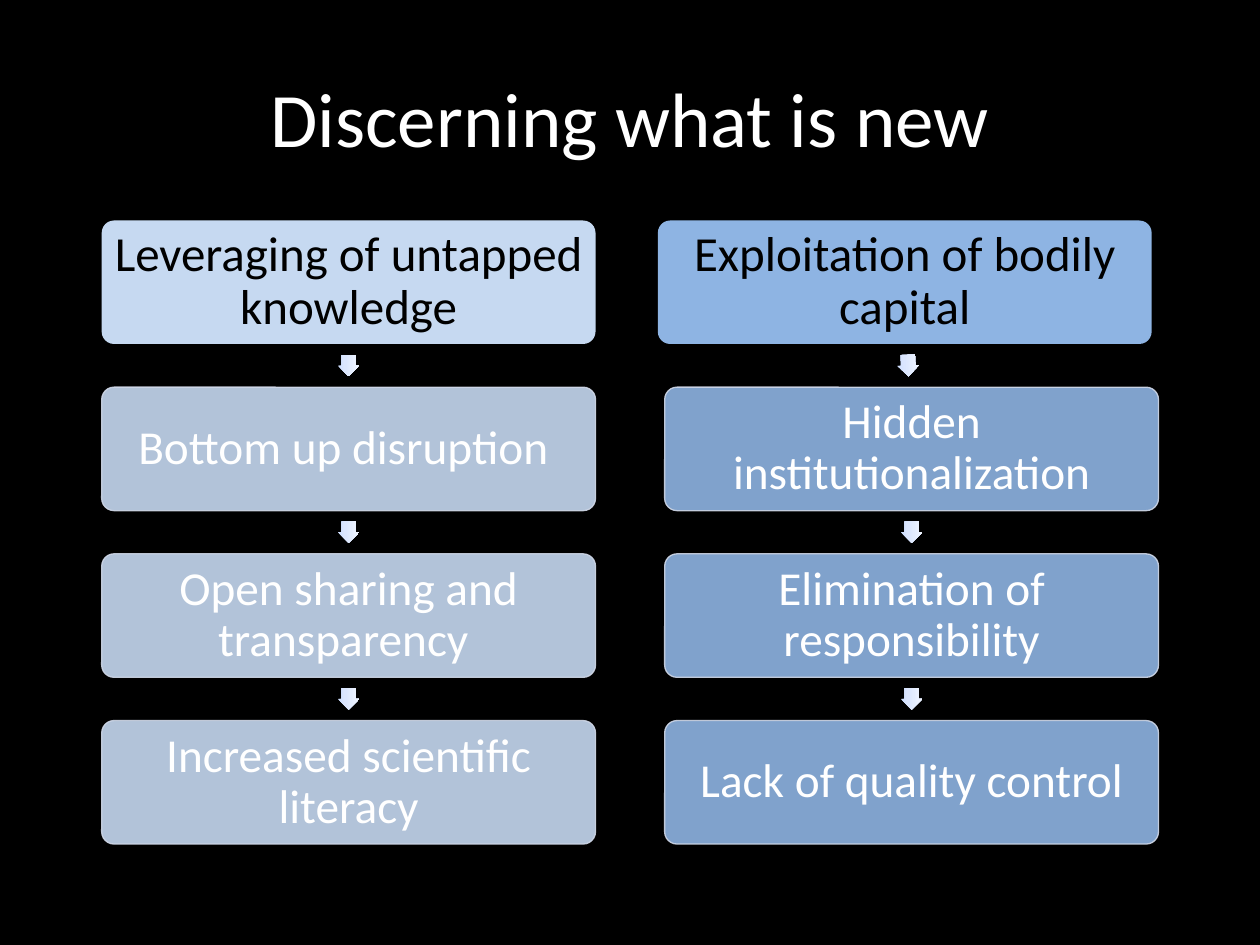
import copy

import pptx
import pptx.dml.color
import pptx.enum.shapes
import pptx.enum.text
import pptx.oxml
import pptx.oxml.ns
import pptx.util

Pt = pptx.util.Pt
MSO_SHAPE = pptx.enum.shapes.MSO_SHAPE

COLORS = {
    "background": "000000",
    "heading": "000000",
    "text": "FFFFFF",
    "outline": "D0D8E8",
    "knowledge": "C6D9F1",
    "capital": "8EB4E3",
}
ARROW_STOPS = [(0, "CDDDFE"), (0.35, "DBE6FE"), (1, "F0F5FF")]

TOP, PITCH = 126, 95.25
BOX_WIDTH, BOX_HEIGHT = 282.2, 70.55
ARROW_SIZE = 12.35

CHAINS = [
    ("knowledge", 58.1, 58.1, 90, "Leveraging of untapped knowledge",
     ["Bottom up disruption ", "Open sharing and transparency ",
      "Increased scientific literacy"]),
    ("capital", 375.9, 379.8, 87.6, "Exploitation of bodily capital",
     ["Hidden institutionalization", "Elimination of responsibility",
      "Lack of quality control"]),
]


def rgb(color):
    return pptx.dml.color.RGBColor.from_string(color)


class ChainSlide:
    """Draw titled chains of boxes in one style on a slide."""

    def __init__(self, slide, font="Calibri"):
        self.slide = slide
        self.font = font
        slide.background.fill.solid()
        slide.background.fill.fore_color.rgb = rgb(COLORS["background"])

    def label(self, shape, text, size, color, inset, spacing=1):
        frame = shape.text_frame
        frame.word_wrap = True
        frame.vertical_anchor = pptx.enum.text.MSO_ANCHOR.MIDDLE
        frame.margin_left = frame.margin_right = Pt(inset)
        frame.margin_top = frame.margin_bottom = Pt(inset)
        paragraph = frame.paragraphs[0]
        paragraph.alignment = pptx.enum.text.PP_ALIGN.CENTER
        paragraph.line_spacing = spacing
        run = paragraph.add_run()
        run.text = text
        run.font.name = self.font
        run.font.size = Pt(size)
        run.font.color.rgb = rgb(COLORS[color])

    def title(self, text):
        heading = self.slide.shapes.add_textbox(Pt(36), Pt(21.6), Pt(648), Pt(90))
        self.label(heading, text, 44, "text", 3.6)

    def set_alpha(self, properties, percent):
        color = properties.find(".//" + pptx.oxml.ns.qn("a:srgbClr"))
        alpha = pptx.oxml.parse_xml(
            f'<a:alpha {pptx.oxml.ns.nsdecls("a")} val="{percent * 1000}"/>')
        color.append(alpha)

    def box(self, left, top, text, fill, is_heading):
        box = self.slide.shapes.add_shape(
            MSO_SHAPE.ROUNDED_RECTANGLE, Pt(left), Pt(top), Pt(BOX_WIDTH), Pt(BOX_HEIGHT))
        box.adjustments[0] = 0.1
        box.shadow.inherit = False
        box.fill.solid()
        box.fill.fore_color.rgb = rgb(COLORS[fill])
        if is_heading:
            box.line.fill.background()
            self.label(box, text, 28, "heading", 2.88, 0.9)
        else:
            box.line.width = Pt(0.75)
            box.line.color.rgb = rgb(COLORS["outline"])
            properties = box._element.spPr
            self.set_alpha(properties.find(pptx.oxml.ns.qn("a:solidFill")), 90)
            self.set_alpha(properties.find(pptx.oxml.ns.qn("a:ln")), 90)
            self.label(box, text, 27, "text", 2.88, 0.9)

    def arrow(self, center_x, center_y, rotation):
        half = ARROW_SIZE / 2
        arrow = self.slide.shapes.add_shape(
            MSO_SHAPE.RIGHT_ARROW, Pt(center_x - half), Pt(center_y - half),
            Pt(ARROW_SIZE), Pt(ARROW_SIZE))
        arrow.rotation = rotation
        arrow.adjustments[0] = 0.667
        arrow.adjustments[1] = 0.5
        arrow.shadow.inherit = False
        arrow.line.fill.background()
        arrow.fill.gradient()
        arrow.fill.gradient_angle = 90
        stop_list = arrow._element.spPr.find(".//" + pptx.oxml.ns.qn("a:gsLst"))
        stop_list.append(copy.deepcopy(stop_list[-1]))
        for stop, (position, color) in zip(arrow.fill.gradient_stops, ARROW_STOPS):
            stop.position = position
            stop.color.rgb = rgb(color)

    def chain(self, fill, heading_left, step_left, first_rotation, heading, steps):
        self.box(heading_left, TOP, heading, fill, True)
        previous_left, rotation = heading_left, first_rotation
        for row, step in enumerate(steps, start=1):
            top = TOP + row * PITCH
            center_x = (previous_left + step_left + BOX_WIDTH) / 2
            self.arrow(center_x, top - (PITCH - BOX_HEIGHT) / 2, rotation)
            self.box(step_left, top, step, fill, False)
            previous_left, rotation = step_left, 90


def main():
    deck = pptx.Presentation()
    deck.slide_width, deck.slide_height = Pt(720), Pt(540)
    page = ChainSlide(deck.slides.add_slide(deck.slide_layouts[6]))
    page.title("Discerning what is new")
    for chain in CHAINS:
        page.chain(*chain)
    deck.save("out.pptx")


if __name__ == "__main__":
    main()
